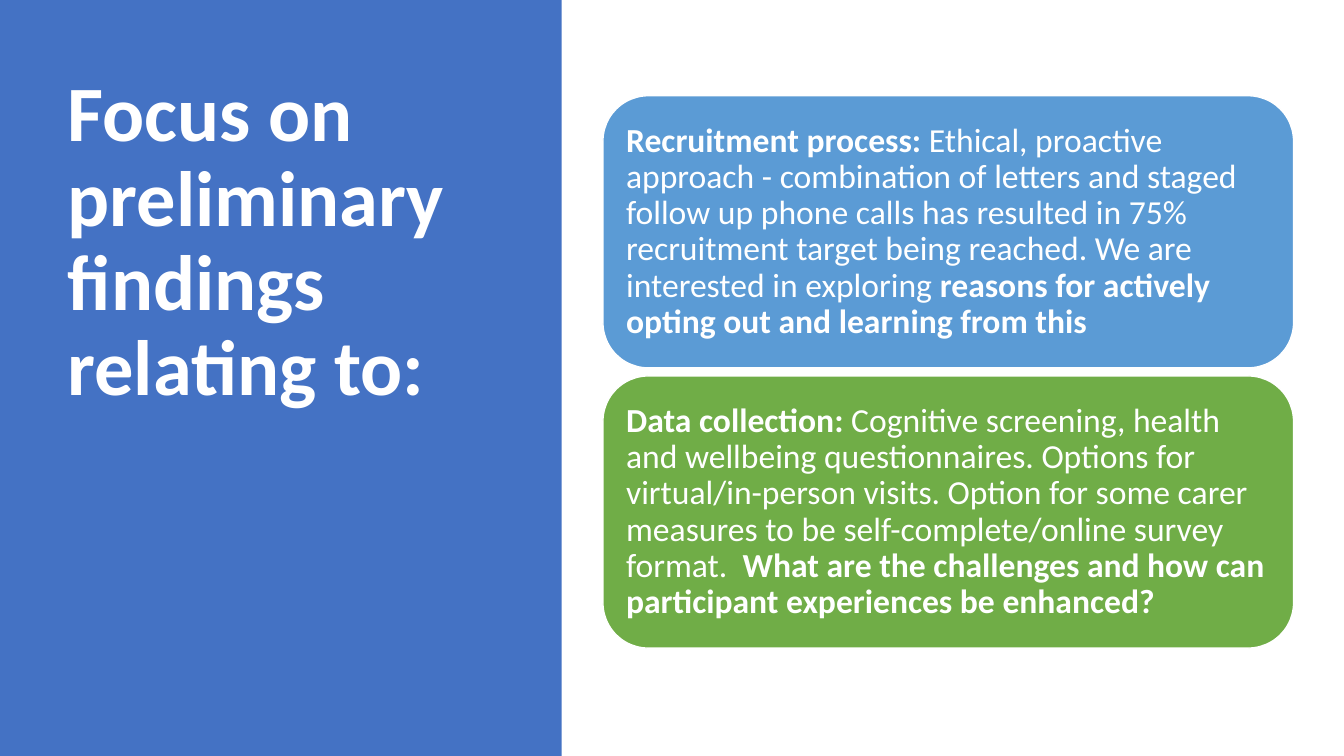
from pptx import Presentation
from pptx.dml.color import RGBColor
from pptx.enum.shapes import MSO_SHAPE
from pptx.enum.text import MSO_ANCHOR, MSO_AUTO_SIZE, PP_ALIGN
from pptx.util import Inches, Pt

COLORS = {"panel": "4472C4", "recruitment": "5B9BD5", "collection": "70AD47", "white": "FFFFFF"}
FONT = "Calibri"
SLIDE_WIDTH, SLIDE_HEIGHT = 13.33, 7.5
PANEL_WIDTH = 5.57
CARD_LEFT, CARD_TOP = 5.98, 0.95
CARD_WIDTH, CARD_HEIGHT, CARD_PITCH = 6.85, 2.7, 2.78

CARDS = [
    ("recruitment", [
        ("Recruitment process: ", True),
        ("Ethical, proactive approach - combination of letters and staged follow up phone calls "
         "has resulted in 75% recruitment target being reached. We are interested in exploring ", False),
        ("reasons for actively opting out and learning from this", True),
    ]),
    ("collection", [
        ("Data collection: ", True),
        ("Cognitive screening, health and wellbeing questionnaires. Options for virtual/in-person "
         "visits. Option for some carer measures to be self-complete/online survey format.  ", False),
        ("What are the challenges and how can participant experiences be enhanced?", True),
    ]),
]


def color(name):
    return RGBColor.from_string(COLORS[name])


def write_text(shape, runs, size, anchor, vertical_inset):
    frame = shape.text_frame
    frame.word_wrap = True
    frame.auto_size = MSO_AUTO_SIZE.NONE
    frame.vertical_anchor = anchor
    frame.margin_left = frame.margin_right = Inches(0.1)
    frame.margin_top = frame.margin_bottom = Inches(vertical_inset)
    paragraph = frame.paragraphs[0]
    paragraph.alignment = PP_ALIGN.LEFT
    paragraph.line_spacing = 0.9
    paragraph.space_before = Pt(0)
    for text, bold in runs:
        run = paragraph.add_run()
        run.text = text
        run.font.name = FONT
        run.font.size = Pt(size)
        run.font.bold = bold
        run.font.color.rgb = color("white")


def add_block(slide, kind, left, top, width, height, fill, line=None):
    shape = slide.shapes.add_shape(kind, Inches(left), Inches(top), Inches(width), Inches(height))
    shape.shadow.inherit = False
    shape.fill.solid()
    shape.fill.fore_color.rgb = color(fill)
    if line:
        shape.line.color.rgb = color(line)
        shape.line.width = Pt(1)
    else:
        shape.line.fill.background()
    return shape


def add_title_panel(slide):
    panel = add_block(slide, MSO_SHAPE.RECTANGLE, 0, 0, PANEL_WIDTH, SLIDE_HEIGHT, "panel")
    title = slide.shapes.title
    title.element.addprevious(panel.element)
    title.left, title.top = Inches(0.57), Inches(0.68)
    title.width, title.height = Inches(4.16), Inches(6.02)
    write_text(title, [("Focus on preliminary findings relating to:", True)],
               size=56, anchor=MSO_ANCHOR.TOP, vertical_inset=0.05)


def add_card(slide, row, fill, runs):
    card = add_block(slide, MSO_SHAPE.ROUNDED_RECTANGLE, CARD_LEFT, CARD_TOP + row * CARD_PITCH,
                     CARD_WIDTH, CARD_HEIGHT, fill, line="white")
    write_text(card, runs, size=24, anchor=MSO_ANCHOR.MIDDLE, vertical_inset=0.1)


def main():
    presentation = Presentation()
    presentation.slide_width = Inches(SLIDE_WIDTH)
    presentation.slide_height = Inches(SLIDE_HEIGHT)
    slide = presentation.slides.add_slide(presentation.slide_layouts.get_by_name("Title Only"))
    add_title_panel(slide)
    for row, (fill, runs) in enumerate(CARDS):
        add_card(slide, row, fill, runs)
    presentation.save("out.pptx")


if __name__ == "__main__":
    main()
